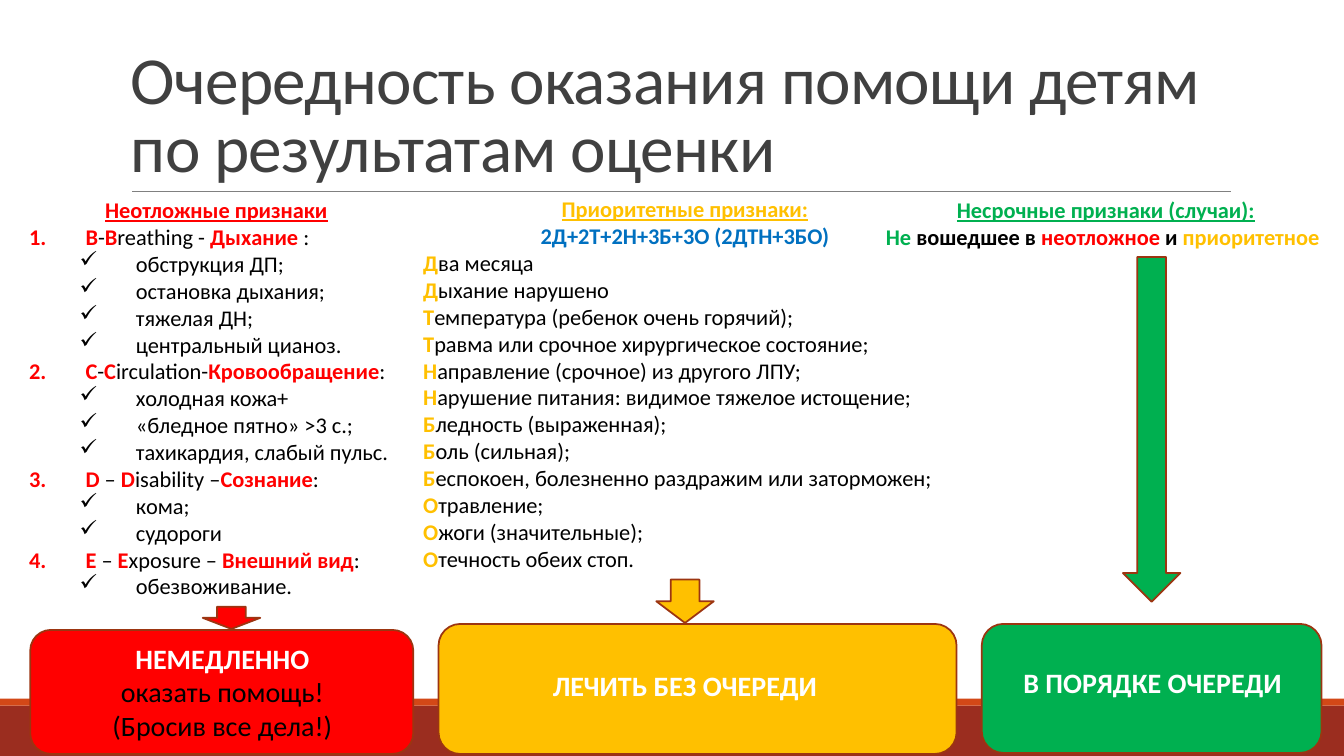
from lxml.etree import SubElement
from pptx import Presentation
from pptx.dml.color import RGBColor
from pptx.enum.shapes import MSO_CONNECTOR as Connector, MSO_SHAPE as Shape
from pptx.enum.text import MSO_ANCHOR as Anchor, PP_ALIGN as Align
from pptx.oxml.ns import qn
from pptx.util import Inches, Pt

COLOURS = {
    "black": "000000", "white": "FFFFFF", "title": "404040", "rule": "808080",
    "red": "FF0000", "amber": "FFC000", "green": "00B050", "blue": "0070C0",
    "outline": "9C3511", "footer": "9B2D1F", "strip": "D34817",
}
HANG = Inches(0.56)
SUBLEVEL = Inches(0.5)


def plain(text, colour="black"):
    return text, colour, False, False


def bold(text, colour):
    return text, colour, True, False


def heading(text, colour):
    return text, colour, True, True


class SlideBuilder:
    font = "Calibri"

    def __init__(self, deck):
        self.width, self.height = deck.slide_width, deck.slide_height
        self.page = deck.slides.add_slide(deck.slide_layouts[6])

    def colour(self, name):
        return RGBColor.from_string(COLOURS[name])

    def place(self, left, top, width, height):
        across, down = self.width / 100, self.height / 100
        return (round(left * across), round(top * down),
                round(width * across), round(height * down))

    def shape(self, kind, area, fill, line=None):
        shape = self.page.shapes.add_shape(kind, *self.place(*area))
        shape.shadow.inherit = False
        shape.fill.solid()
        shape.fill.fore_color.rgb = self.colour(fill)
        if line:
            shape.line.color.rgb = self.colour(line)
            shape.line.width = Pt(1.25)
        else:
            shape.line.fill.background()

    def rule(self, left, right, top, colour):
        x, y, length, _ = self.place(left, top, right - left, 0)
        line = self.page.shapes.add_connector(Connector.STRAIGHT, x, y, x + length, y)
        line.line.color.rgb = self.colour(colour)
        line.line.width = Pt(0.5)
        SubElement(line._element.spPr, qn("a:effectLst"))

    def text(self, area, size, lines, centred=0):
        box = self.page.shapes.add_textbox(*self.place(*area))
        frame = box.text_frame
        frame.word_wrap = True
        for index, spans in enumerate(lines):
            para = frame.add_paragraph() if index else frame.paragraphs[0]
            para.alignment = Align.CENTER if index < centred else Align.LEFT
            for text, colour, is_bold, underlined in spans:
                span = para.add_run()
                span.text = text
                span.font.name = self.font
                span.font.size = Pt(size)
                span.font.bold = is_bold
                span.font.underline = underlined
                span.font.color.rgb = self.colour(colour)
        return frame

    def bullet(self, para, level):
        para.level = level
        properties = para._p.get_or_add_pPr()
        properties.set("marL", str(HANG + level * SUBLEVEL))
        properties.set("indent", str(-HANG))
        if level:
            SubElement(properties, qn("a:buChar"), char="✓")
        else:
            SubElement(properties, qn("a:buFont"), typeface="+mj-lt")
            SubElement(properties, qn("a:buAutoNum"), type="arabicPeriod")

    def title(self, area, text):
        frame = self.text(area, 48, [[plain(text, "title")]])
        frame.vertical_anchor = Anchor.BOTTOM
        para = frame.paragraphs[0]
        para.line_spacing = 0.85
        para.runs[0].font._element.set("spc", "-50")

    def outcome(self, colour, arrow, card, label, lines):
        self.shape(Shape.DOWN_ARROW, arrow, colour, "outline")
        self.shape(Shape.ROUNDED_RECTANGLE, card, colour, "outline")
        self.text(label, 20, lines, centred=len(lines))


EMERGENCY_SIGNS = [
    ("B", "-", "B", "reathing - ", "Дыхание", " :",
     ["обструкция ДП;", "остановка дыхания;", "тяжелая ДН;", "центральный цианоз."]),
    ("C", "-", "C", "irculation-", "Кровообращение", ":",
     ["холодная кожа+", "«бледное пятно» >3 с.;", "тахикардия, слабый пульс."]),
    ("D ", "– ", "D", "isability –", "Сознание", ":", ["кома;", "судороги"]),
    ("E ", "– ", "E", "xposure – ", "Внешний вид", ":", ["обезвоживание."]),
]
PRIORITY_SIGNS = [
    "Два месяца",
    "Дыхание нарушено",
    "Температура (ребенок очень горячий);",
    "Травма или срочное хирургическое состояние;",
    "Направление (срочное) из другого ЛПУ;",
    "Нарушение питания: видимое тяжелое истощение;",
    "Бледность (выраженная);",
    "Боль (сильная);",
    "Беспокоен, болезненно раздражим или заторможен;",
    "Отравление;",
    "Ожоги (значительные);",
    "Отечность обеих стоп.",
]


def add_emergency(slide):
    lines, levels = [[heading("Неотложные признаки", "red")]], []
    for *parts, signs in EMERGENCY_SIGNS:
        lines.append([plain(part) if index % 2 else bold(part, "red")
                      for index, part in enumerate(parts)])
        lines += [[plain(sign)] for sign in signs]
        levels += [0] + [1] * len(signs)
    frame = slide.text((1.43, 25.33, 29.33, 55.2), 16, lines, centred=1)
    for para, level in zip(frame.paragraphs[1:], levels):
        slide.bullet(para, level)
    slide.outcome("red", (15.08, 80.27, 4.28, 2.93), (2.25, 83.33, 28.5, 16.4),
                  (3.98, 84.13, 25.13, 14.8),
                  [[bold("НЕМЕДЛЕННО", "white")], [plain("оказать помощь!")],
                   [plain("(Бросив все дела!)")]])


def add_priority(slide):
    lines = [[heading("Приоритетные признаки:", "amber")],
             [bold("2Д+2Т+2Н+3Б+3О (2ДТН+3БО)", "blue")]]
    lines += [[bold(sign[0], "amber"), plain(sign[1:])] for sign in PRIORITY_SIGNS]
    slide.text((30.75, 25.2, 40.43, 51.6), 16, lines, centred=2)
    slide.outcome("amber", (48.83, 76.67, 4.28, 5.73), (32.63, 82.53, 38.55, 17.2),
                  (38.4, 87.73, 25.13, 5.87), [[bold("ЛЕЧИТЬ БЕЗ ОЧЕРЕДИ", "white")]])


def add_routine(slide):
    lines = [[heading("Несрочные признаки (случаи):", "green")],
             [bold("Не ", "green"), bold("вошедшее в ", "black"),
              bold("неотложное ", "red"), bold("и", "black"),
              bold(" приоритетное", "amber")]]
    slide.text((65.18, 25.33, 34.2, 8.53), 16, lines, centred=1)
    slide.outcome("green", (83.55, 34, 4.28, 45.6), (73.05, 82.53, 25.28, 17.07),
                  (73.2, 87.33, 25.13, 5.87), [[bold("В ПОРЯДКЕ ОЧЕРЕДИ", "white")]])


def main():
    deck = Presentation()
    deck.slide_width, deck.slide_height = Inches(13.33), Inches(7.5)
    slide = SlideBuilder(deck)
    slide.shape(Shape.RECTANGLE, (0, 93.33, 100, 6.67), "footer")
    slide.shape(Shape.RECTANGLE, (0, 92.4, 100, 0.93), "strip")
    slide.rule(9.83, 91.58, 25.33, "rule")
    slide.title((9, 4.13, 82.5, 21.2), "Очередность оказания помощи детям по результатам оценки")
    add_emergency(slide)
    add_priority(slide)
    add_routine(slide)
    deck.save("out.pptx")


if __name__ == "__main__":
    main()
